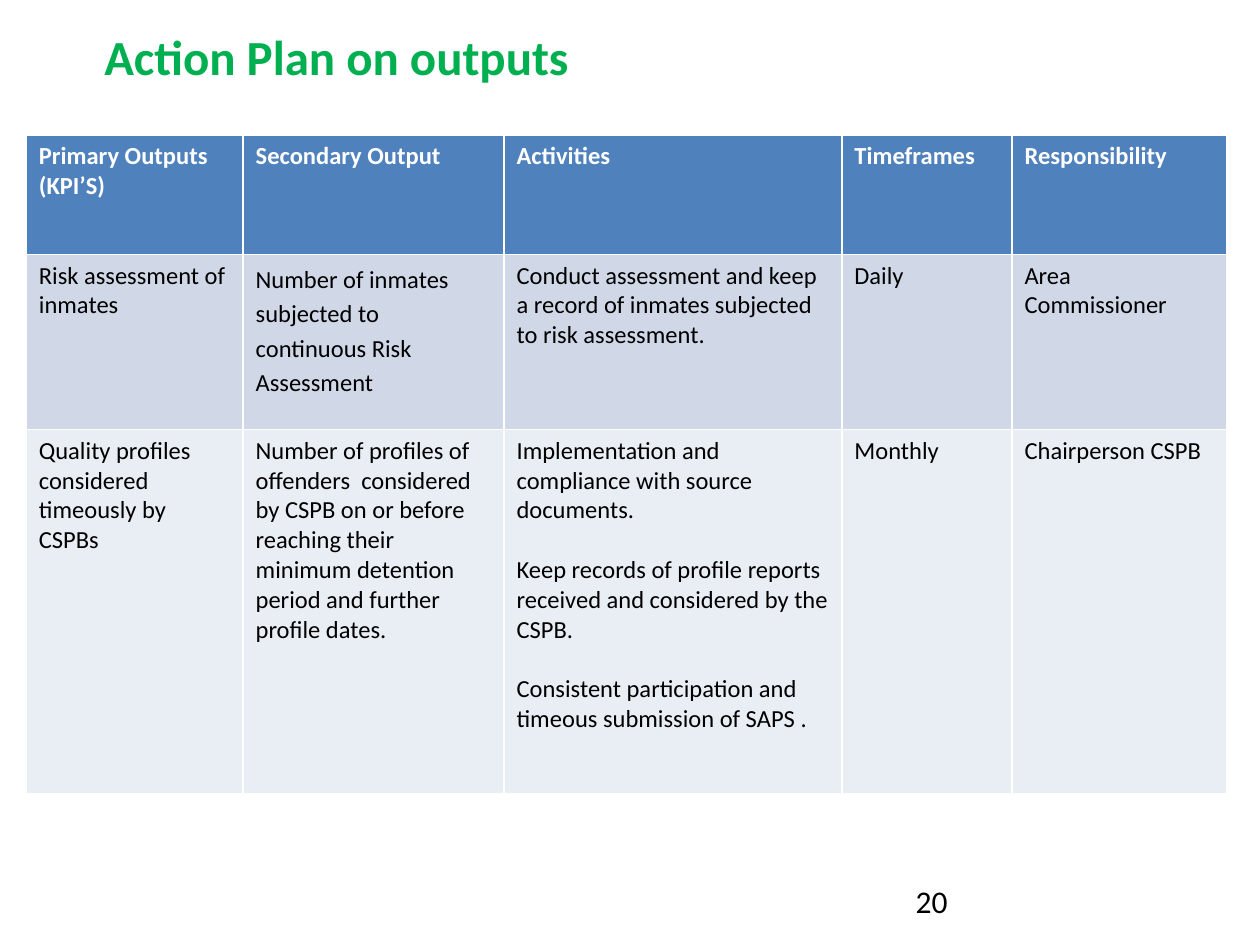
from pptx import Presentation
from pptx.dml.color import RGBColor
from pptx.enum.text import MSO_ANCHOR, PP_ALIGN
from pptx.util import Cm, Pt

LEFT = PP_ALIGN.LEFT
TOP = MSO_ANCHOR.TOP

WHITE = RGBColor(0xFF, 0xFF, 0xFF)
BLACK = RGBColor(0x00, 0x00, 0x00)
GREEN = RGBColor(0x00, 0xB0, 0x50)
BLUE = RGBColor(0x4F, 0x81, 0xBD)
PALE = RGBColor(0xD0, 0xD8, 0xE8)
LIGHT = RGBColor(0xE9, 0xED, 0xF4)

TITLE = {"name": "Calibri", "size": Pt(28), "bold": True, "color": GREEN}
HEAD = {"name": "Calibri", "size": Pt(14), "bold": True, "color": WHITE}
BODY = {"name": "Calibri", "size": Pt(14), "bold": False, "color": BLACK}
NUMBER = {"name": "Calibri", "size": Pt(18), "bold": False, "color": BLACK}

WIDTHS = [4.37, 5.26, 6.81, 3.43, 4.32]
HEIGHTS = [2.41, 3.53, 7.34]
PLAN = [
    ["Primary Outputs (KPI’S)", "Secondary Output", "Activities",
     "Timeframes", "Responsibility"],
    ["Risk assessment of inmates",
     "Number of inmates subjected to continuous Risk Assessment",
     "Conduct assessment and keep a record of inmates subjected to risk assessment.",
     "Daily", "Area Commissioner"],
    ["Quality profiles considered timeously by CSPBs",
     "Number of profiles of offenders  considered by CSPB on or before "
     "reaching their minimum detention period and further profile dates.",
     "Implementation and compliance with source documents.\n"
     "Keep records of profile reports received and considered by the CSPB.\n"
     "Consistent participation and timeous submission of SAPS .",
     "Monthly", "Chairperson CSPB"],
]
STYLES = [(BLUE, HEAD), (PALE, BODY), (LIGHT, BODY)]


def write(frame, text, style, gap=0):
    frame.text = text
    frame.word_wrap = True
    for i, para in enumerate(frame.paragraphs):
        para.alignment = LEFT
        para.space_before = Pt(gap if i else 0)
        for run in para.runs:
            for key, value in style.items():
                if key == "color":
                    run.font.color.rgb = value
                else:
                    setattr(run.font, key, value)


def add_title(slide, text):
    title = slide.shapes.title
    place = {"left": Cm(1.85), "top": Cm(0.41), "width": Cm(22.86), "height": Cm(1.45)}
    for key, value in place.items():
        setattr(title, key, value)
    title.text_frame.vertical_anchor = TOP
    write(title.text_frame, text, TITLE)


def add_plan(slide):
    table = slide.shapes.add_table(
        len(HEIGHTS), len(WIDTHS), Cm(0.53), Cm(2.72),
        Cm(sum(WIDTHS)), Cm(sum(HEIGHTS))).table
    for column, width in zip(table.columns, WIDTHS):
        column.width = Cm(width)
    for row, height, texts, (fill, style) in zip(table.rows, HEIGHTS, PLAN, STYLES):
        row.height = Cm(height)
        for cell, text in zip(row.cells, texts):
            cell.fill.solid()
            cell.fill.fore_color.rgb = fill
            write(cell.text_frame, text, style, gap=17)
    table.cell(1, 1).text_frame.paragraphs[0].line_spacing = 1.15


def add_number(slide, text):
    box = slide.shapes.add_textbox(Cm(18.21), Cm(17.65), Cm(5.92), Cm(1.02))
    write(box.text_frame, text, NUMBER)


def main():
    deck = Presentation()
    deck.slide_width, deck.slide_height = Cm(25.4), Cm(19.05)
    slide = deck.slides.add_slide(deck.slide_layouts[5])
    add_plan(slide)
    add_number(slide, "20")
    add_title(slide, "Action Plan on outputs")
    deck.save("out.pptx")


if __name__ == "__main__":
    main()
